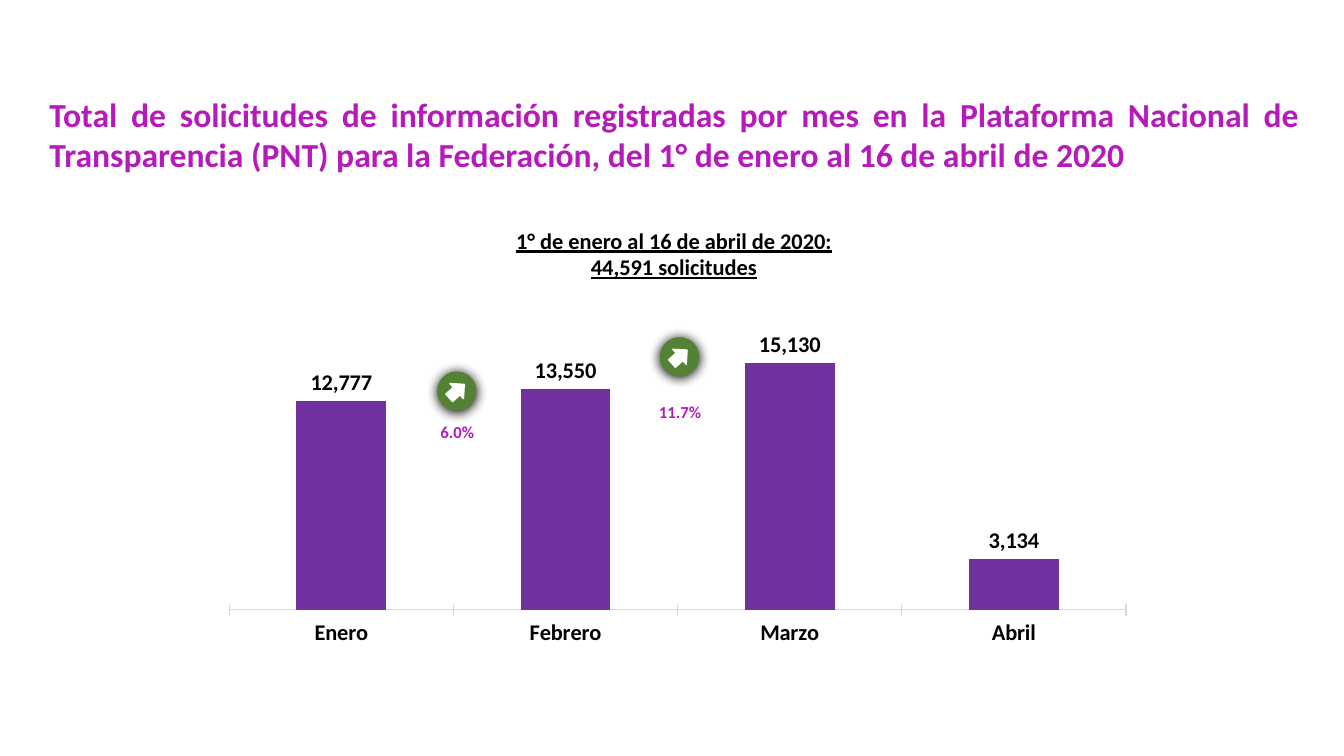
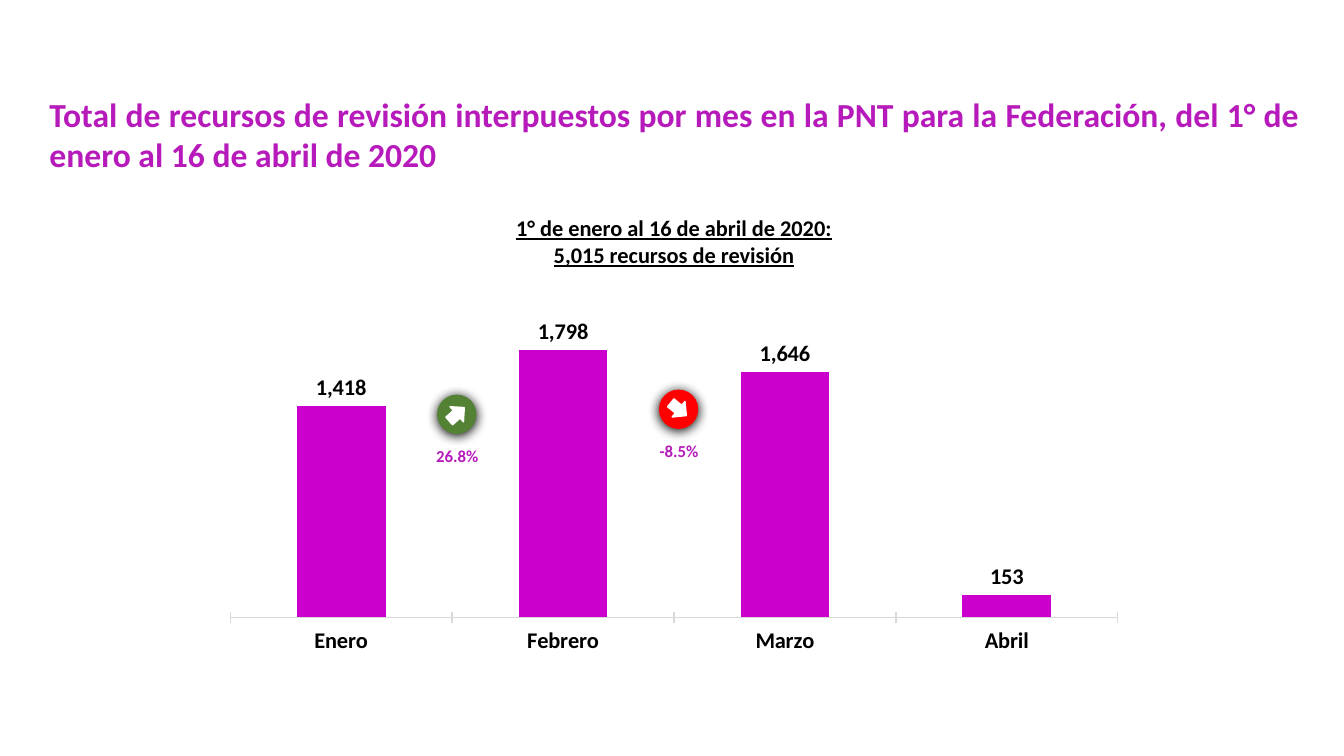
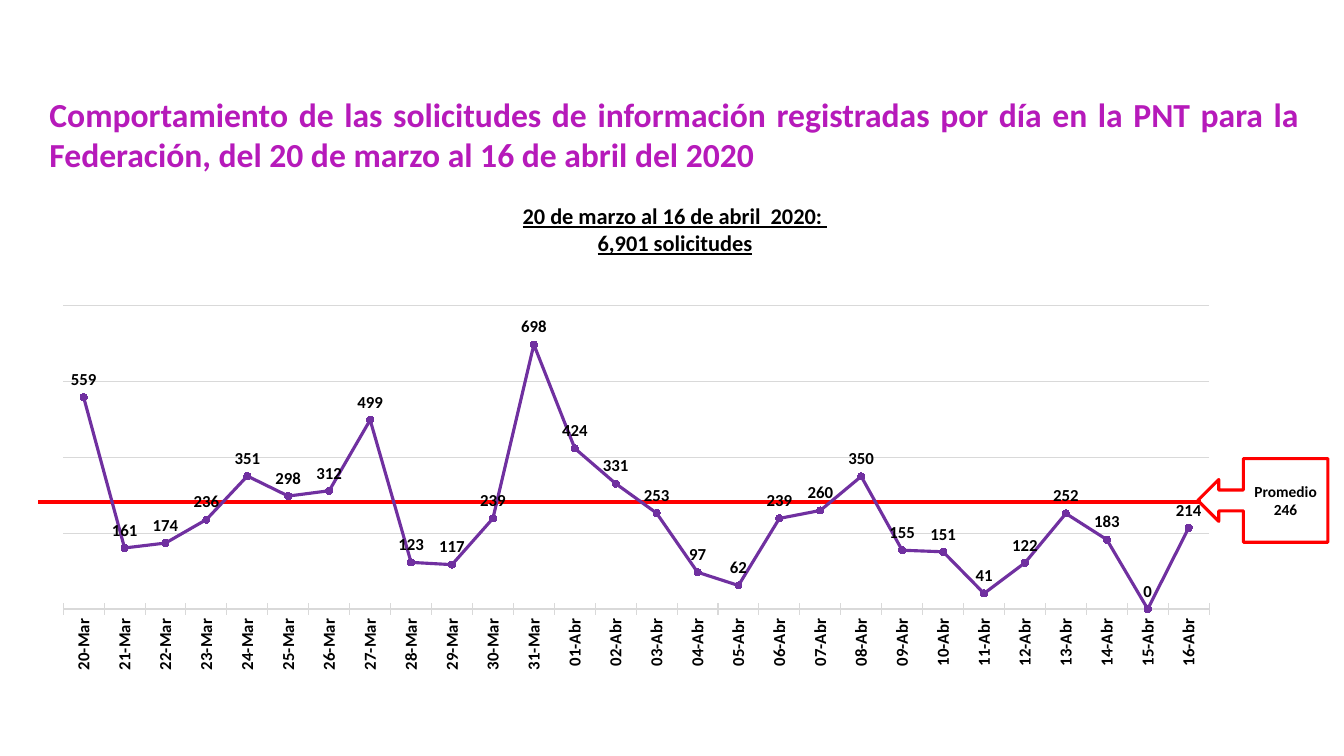
from pptx import Presentation
from pptx.chart.data import CategoryChartData
from pptx.dml.color import RGBColor
from pptx.enum import chart as ch, shapes, text
from pptx.oxml import parse_xml
from pptx.oxml.ns import nsdecls, qn
from pptx.util import Inches, Pt

FONT = "Calibri"
BLACK, WHITE, GREY = "000000", "FFFFFF", "D9D9D9"
ACCENT, PURPLE, PINK = "B61ABA", "7030A0", "CC00CC"
GREEN, RED = "548235", "FF0000"
TITLE_BOX = (0.39, 0.88, 12.6, 0.91)
DISC, ARROW = 0.39, 0.2
LEFT, CENTER, JUST = text.PP_ALIGN.LEFT, text.PP_ALIGN.CENTER, text.PP_ALIGN.JUSTIFY

MONTHS = ["Enero", "Febrero", "Marzo", "Abril"]
DAYS = [f"{d}-Mar" for d in range(20, 32)] + [f"{d:02}-Abr" for d in range(1, 17)]
DAILY = [559, 161, 174, 236, 351, 298, 312, 499, 123, 117, 239, 698, 424, 331,
         253, 97, 62, 239, 260, 350, 155, 151, 41, 122, 252, 183, 0, 214]

# plot: left, top, width, height as shares of the chart
# badges: change, disc centre x and y, top of the label
SLIDES = [
    dict(title="Total de solicitudes de información registradas por mes en la "
               "Plataforma Nacional de Transparencia (PNT) para la Federación, "
               "del 1° de enero al 16 de abril de 2020",
         sub=["1° de enero al 16 de abril de 2020: 44,591 solicitudes"],
         sub_box=(4.88, 2.2, 3.61, 0.64),
         chart=dict(kind="COLUMN_CLUSTERED", box=(2.09, 2.99, 9.17, 3.6),
                    plot=(0.02, 0.04, 0.97, 0.81), cats=MONTHS,
                    vals=[12777, 13550, 15130, 3134],
                    top=18000, color=PURPLE, size=16),
         badges=[("6.0%", 4.53, 3.88, 4.13), ("11.7%", 6.74, 3.54, 3.94)]),
    dict(title="Total de recursos de revisión interpuestos por mes en la PNT para "
               "la Federación, del 1° de enero al 16 de abril de 2020",
         sub=["1° de enero al 16 de abril de 2020:", "5,015 recursos de revisión"],
         sub_box=(4.37, 2.08, 4.63, 0.64),
         chart=dict(kind="COLUMN_CLUSTERED", box=(2.1, 3.1, 9.17, 3.48),
                    plot=(0.02, 0.02, 0.96, 0.85), cats=MONTHS,
                    vals=[1418, 1798, 1646, 153],
                    top=2000, color=PINK, size=16),
         badges=[("26.8%", 4.53, 4.11, 4.37), ("-8.5%", 6.73, 4.06, 4.32)]),
    dict(title="Comportamiento de las solicitudes de información registradas por "
               "día en la PNT para la Federación, del 20 de marzo al 16 de abril "
               "del 2020",
         sub=["20 de marzo al 16 de abril  2020: ", "6,901 solicitudes"],
         sub_box=(4.89, 1.96, 3.61, 0.64),
         mean=["Promedio", "246"],
         chart=dict(kind="LINE_MARKERS", box=(0.39, 2.96, 11.84, 3.76),
                    plot=(0.02, 0.02, 0.96, 0.8), cats=DAYS, vals=DAILY,
                    top=800, color=PURPLE, size=12)),
]


def rgb(code):
    return RGBColor.from_string(code)


def inches(box):
    return [Inches(n) for n in box]


def paint(fill, color):
    fill.solid()
    fill.fore_color.rgb = rgb(color)


def stroke(line, color, width):
    line.color.rgb = rgb(color)
    line.width = Pt(width)


def style(font, size, color=BLACK):
    font.name, font.size, font.bold = FONT, Pt(size), True
    font.color.rgb = rgb(color)


def write(frame, lines, size, color=BLACK, align=CENTER, under=None):
    frame.word_wrap = True
    for i, line in enumerate(lines):
        par = frame.add_paragraph() if i else frame.paragraphs[0]
        par.alignment = align
        run = par.add_run()
        run.text = line
        style(run.font, size, color)
        run.font.underline = under


def add_title(slide, words):
    title = slide.shapes.title
    title.left, title.top, title.width, title.height = inches(TITLE_BOX)
    frame = title.text_frame
    frame.auto_size = text.MSO_AUTO_SIZE.NONE
    frame.vertical_anchor = text.MSO_ANCHOR.TOP
    write(frame, [words], 24, ACCENT, JUST)


def add_badge(slide, label, x, y, top):
    """Disc with an arrow that rises or falls, and the change below it."""
    falls = label.startswith("-")
    group = slide.shapes.add_group_shape().shapes

    def centred(kind, size, color):
        part = group.add_shape(kind, *inches((x - size / 2, y - size / 2, size, size)))
        part.shadow.inherit = False
        paint(part.fill, color)
        return part

    disc = centred(shapes.MSO_SHAPE.OVAL, DISC, RED if falls else GREEN)
    disc.line.fill.background()
    glow = parse_xml(f'<a:outerShdw {nsdecls("a")} blurRad="{Pt(8.5)}" dist="{Pt(1)}" '
                     f'dir="5400000" algn="t" rotWithShape="0"><a:srgbClr val="{BLACK}"/>'
                     '</a:outerShdw>')
    disc.element.spPr.find(qn("a:effectLst")).append(glow)
    arrow = centred(shapes.MSO_SHAPE.RIGHT_ARROW, ARROW, WHITE)
    stroke(arrow.line, WHITE, 1)
    arrow.rotation = 39.3 if falls else 318.4
    box = group.add_textbox(*inches((x - 0.42, top, 0.85, 0.3)))
    write(box.text_frame, [label], 12, ACCENT)


def add_mean(slide, lines):
    """Red line at the mean, with its callout."""
    rule = slide.shapes.add_connector(shapes.MSO_CONNECTOR.STRAIGHT,
                                      *inches((0.38, 4.98, 11.91, 4.98)))
    stroke(rule.line, RED, 2.5)
    rule.element.spPr.append(parse_xml(f'<a:effectLst {nsdecls("a")}/>'))
    call = slide.shapes.add_shape(shapes.MSO_SHAPE.LEFT_ARROW_CALLOUT,
                                  *inches((11.88, 4.55, 1.29, 0.83)))
    call.shadow.inherit = False
    call.fill.background()
    stroke(call.line, RED, 2.25)
    frame = call.text_frame
    frame.margin_left = frame.margin_right = Inches(0.05)
    frame.vertical_anchor = text.MSO_ANCHOR.MIDDLE
    write(frame, lines, 11)


def fit_plot(chart, plot):
    """Place the plot area and clear the chart's backgrounds."""
    clear = f'<c:spPr {nsdecls("c", "a")}><a:noFill/><a:ln><a:noFill/></a:ln></c:spPr>'
    area = chart.element.find(".//" + qn("c:plotArea"))
    for old in area.findall(qn("c:layout")):
        area.remove(old)
    spots = "".join(f'<c:{tag} val="{val}"/>' for tag, val in zip("xywh", plot))
    area.insert(0, parse_xml(
        f'<c:layout {nsdecls("c")}><c:manualLayout><c:layoutTarget val="inner"/>'
        f'<c:xMode val="edge"/><c:yMode val="edge"/>{spots}</c:manualLayout></c:layout>'))
    area.append(parse_xml(clear))
    chart.element.find(qn("c:txPr")).addprevious(parse_xml(clear))


def add_chart(slide, kind, box, plot, cats, vals, top, color, size):
    data = CategoryChartData(number_format="#,##0")
    data.categories = cats
    data.add_series("Series 1", vals)
    chart = slide.shapes.add_chart(getattr(ch.XL_CHART_TYPE, kind),
                                   *inches(box), data).chart
    chart.has_legend = chart.has_title = False
    style(chart.font, size)
    fit_plot(chart, plot)
    lined = kind == "LINE_MARKERS"

    cat, val = chart.category_axis, chart.value_axis
    cat.major_tick_mark = ch.XL_TICK_MARK.CROSS
    cat.minor_tick_mark = ch.XL_TICK_MARK.NONE
    stroke(cat.format.line, GREY, 0.75 if lined else 1)
    style(cat.tick_labels.font, size)
    val.visible = False
    val.minimum_scale, val.maximum_scale = 0, top
    val.has_major_gridlines = lined

    bars = chart.plots[0]
    bars.vary_by_categories = False
    series = bars.series[0]
    if lined:
        val.major_unit = 200
        stroke(val.major_gridlines.format.line, GREY, 0.75)
        turn = cat.tick_labels.font and cat._element.find(qn("c:txPr"))
        turn.find(qn("a:bodyPr")).set("rot", "-5400000")
        series.smooth = False
        stroke(series.format.line, color, 2.25)
        mark = series.marker
        mark.style, mark.size = ch.XL_MARKER_STYLE.CIRCLE, 5
        paint(mark.format.fill, color)
        stroke(mark.format.line, color, 0.75)
    else:
        bars.gap_width = 150
        paint(series.format.fill, color)

    tags = series.data_labels
    tags.show_value = True
    tags.number_format, tags.number_format_is_linked = "#,##0", False
    spot = ch.XL_LABEL_POSITION
    tags.position = spot.ABOVE if lined else spot.OUTSIDE_END
    style(tags.font, size)


def main():
    deck = Presentation()
    deck.slide_width, deck.slide_height = inches((13.33, 7.5))
    for page in SLIDES:
        slide = deck.slides.add_slide(deck.slide_layouts[5])
        add_title(slide, page["title"])
        box = slide.shapes.add_textbox(*inches(page["sub_box"]))
        write(box.text_frame, page["sub"], 16, under=True)
        if "mean" in page:
            add_mean(slide, page["mean"])
        add_chart(slide, **page["chart"])
        for badge in page.get("badges", []):
            add_badge(slide, *badge)
    deck.save("out.pptx")


if __name__ == "__main__":
    main()
